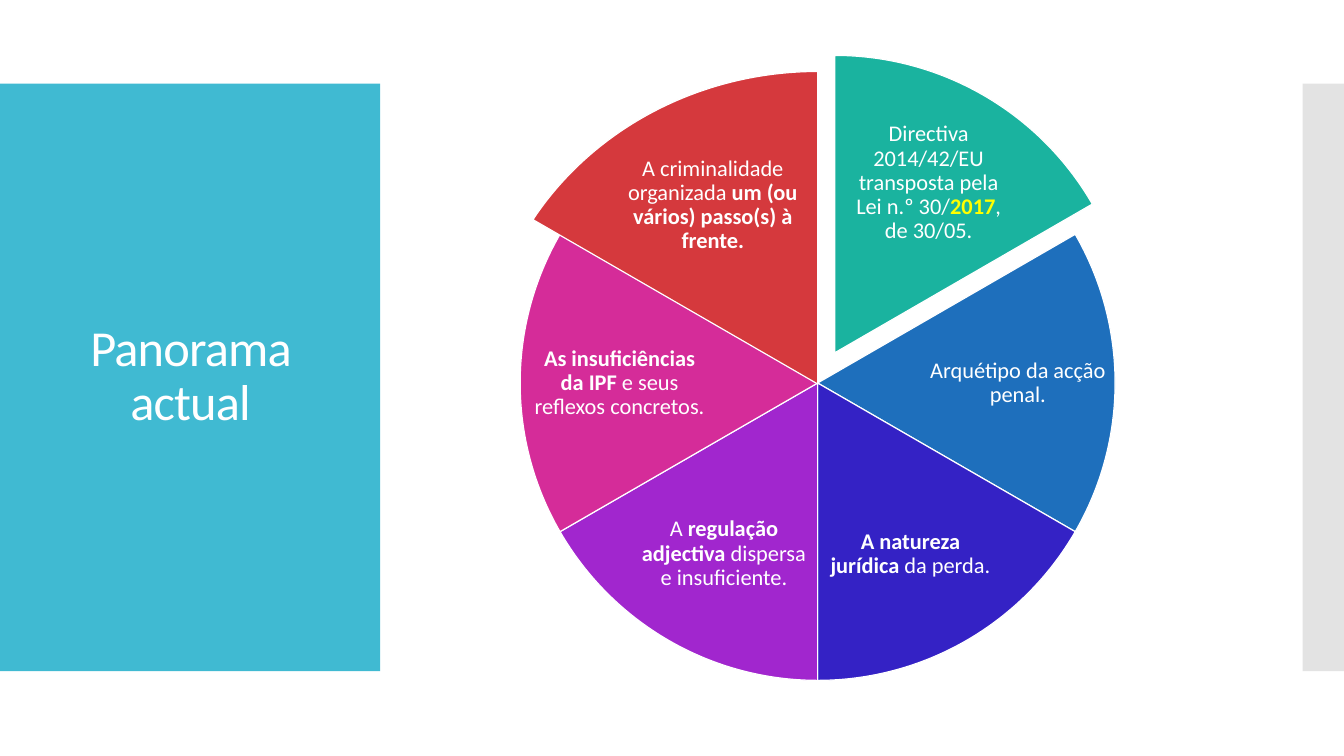
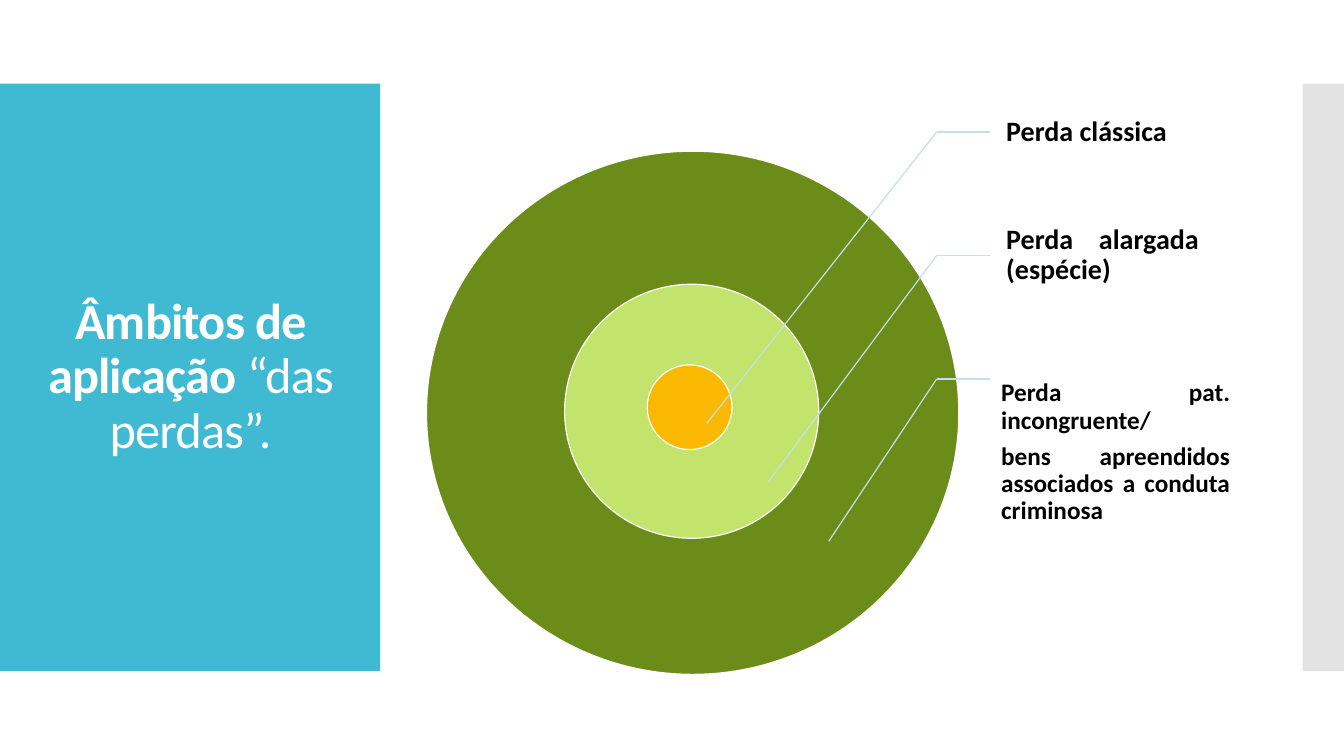
import pptx
import pptx.util
import pptx.dml.color
import pptx.enum.shapes
import pptx.enum.text
import pptx.oxml
import pptx.oxml.ns
import lxml.etree

Inches = pptx.util.Inches
Pt = pptx.util.Pt
RGBColor = pptx.dml.color.RGBColor
Preset = pptx.enum.shapes.MSO_SHAPE
Align = pptx.enum.text.PP_ALIGN
qn = pptx.oxml.ns.qn

FONT = "Calibri"
WHITE = RGBColor(0xFF, 0xFF, 0xFF)
BLACK = RGBColor(0x00, 0x00, 0x00)
YELLOW = RGBColor(0xFF, 0xFF, 0x00)
TITLE_BLUE = RGBColor(0x40, 0xBA, 0xD2)
EDGE_GRAY = RGBColor(0xC8, 0xC8, 0xC8)
LEADER_BLUE = RGBColor(0xC0, 0xE0, 0xEA)
TEAL = RGBColor(0x1A, 0xB3, 0x9F)
BLUE = RGBColor(0x1E, 0x6F, 0xBC)
INDIGO = RGBColor(0x34, 0x22, 0xC5)
PURPLE = RGBColor(0xA1, 0x26, 0xCE)
PINK = RGBColor(0xD5, 0x2C, 0x99)
RED = RGBColor(0xD5, 0x39, 0x3D)
DARK_GREEN = RGBColor(0x6C, 0x8C, 0x1A)
LIGHT_GREEN = RGBColor(0xC2, 0xE4, 0x6D)
AMBER = RGBColor(0xFA, 0xB9, 0x00)

LINE_WIDTH = Pt(0.85)
SLICE_INSETS = (0.02, 0.02, 0.02, 0.02)
TITLE_INSETS = (0.1, 0.05, 0.1, 0.05)
FULL_TURN = 216
SLICE_TURN = 36

SLICES = [
    (TEAL, (0.17, -0.3, 5.9, 5.9), (3.19, 0.33, 1.72, 1.27),
     [("Directiva 2014/42/EU transposta pela Lei n.º 30/", False),
      ("2017", True, YELLOW), (", de 30/05.", False)]),
    (BLUE, (0, 0, 5.9, 5.9), (4.04, 2.36, 1.79, 1.19),
     [("Arquétipo da acção penal.", False)]),
    (INDIGO, (0, 0, 5.9, 5.9), (3.01, 4.01, 1.72, 1.27),
     [("A natureza jurídica ", True), ("da perda.", False)]),
    (PURPLE, (0, 0, 5.9, 5.9), (1.16, 4.01, 1.72, 1.27),
     [("A", False), (" regulação adjectiva ", True),
      ("dispersa e insuficiente.", False)]),
    (PINK, (0, 0, 5.9, 5.9), (0.09, 2.36, 1.79, 1.19),
     [("As insuficiências da IPF ", True),
      ("e seus reflexos concretos.", False)]),
    (RED, (-0.37, -0.14, 6.64, 6.2), (0.94, 0.52, 1.94, 1.33),
     [("A criminalidade organizada ", False),
      ("um (ou vários) passo(s) à frente.", True)]),
]

RINGS = [
    (DARK_GREEN, (0, 0, 5.28, 5.19)),
    (LIGHT_GREEN, (1.37, 1.32, 2.52, 2.52)),
    (AMBER, (2.19, 2.12, 0.84, 0.84)),
]

CALLOUTS = [
    ((2.78, 2.7), (5.59, -0.8, 2.1, 1.23), 20, 0.16,
     [[("Perda clássica", True)]]),
    ((3.39, 3.28), (5.59, 0.42, 2.1, 1.23), 20, 0.16,
     [[("Perda alargada (espécie)", True)]]),
    ((3.99, 3.87), (5.56, 2.41, 2.44, 1.16), 18, 0.14,
     [[("Perda pat. incongruente/", True)],
      [("bens apreendidos associados a conduta criminosa", True)]]),
]


def within(origin, box):
    left, top, width, height = box
    return origin[0] + left, origin[1] + top, width, height


def add_filled(slide, preset, box, color, outline=None):
    shape = slide.shapes.add_shape(preset, *map(Inches, box))
    shape.shadow.inherit = False
    shape.fill.solid()
    shape.fill.fore_color.rgb = color
    if outline is None:
        shape.line.fill.background()
    else:
        shape.line.color.rgb = outline
        shape.line.width = LINE_WIDTH
    return shape


def add_text(slide, box, paragraphs, size, color, align, insets,
             space_after=0, tracking=None):
    frame = slide.shapes.add_textbox(*map(Inches, box)).text_frame
    frame.word_wrap = True
    frame.vertical_anchor = pptx.enum.text.MSO_ANCHOR.MIDDLE
    (frame.margin_left, frame.margin_top,
     frame.margin_right, frame.margin_bottom) = map(Inches, insets)
    for index, runs in enumerate(paragraphs):
        paragraph = frame.add_paragraph() if index else frame.paragraphs[0]
        paragraph.alignment = align
        paragraph.line_spacing = 0.9
        paragraph.space_after = Pt(space_after)
        paragraph.font.name = FONT
        paragraph.font.size = Pt(size)
        paragraph.font.color.rgb = color
        for text, bold, *accent in runs:
            run = paragraph.add_run()
            run.text = text
            run.font.bold = bold
            if accent:
                run.font.color.rgb = accent[0]
            if tracking is not None:
                run._r.get_or_add_rPr().set("spc", str(tracking))


def add_leader(slide, start, end):
    leader = slide.shapes.add_connector(
        pptx.enum.shapes.MSO_CONNECTOR.STRAIGHT, *map(Inches, start + end))
    leader.line.color.rgb = LEADER_BLUE
    leader.line.width = LINE_WIDTH
    lxml.etree.SubElement(leader._element.spPr, qn("a:effectLst"))


def add_titled_slide(deck, title):
    slide = deck.slides.add_slide(deck.slide_layouts[6])
    add_filled(slide, Preset.RECTANGLE, (0, 0.83, 3.77, 5.83), TITLE_BLUE)
    edge = add_filled(slide, Preset.RECTANGLE, (12.92, 0.83, 0.41, 5.83), EDGE_GRAY)
    tint = edge._element.spPr.find(qn("a:solidFill"))[0]
    lxml.etree.SubElement(tint, qn("a:alpha")).set("val", "50000")
    add_text(slide, (0.28, 1.23, 3.22, 5.03), [title], 36, WHITE,
             Align.CENTER, TITLE_INSETS, tracking=-60)
    return slide


def add_slice_wheel(slide, origin):
    for index, (color, pie_box, label_box, label) in enumerate(SLICES):
        start = (162 + SLICE_TURN * index) % FULL_TURN
        pie = add_filled(slide, Preset.PIE, within(origin, pie_box), color, WHITE)
        pie.adjustments[0] = start
        pie.adjustments[1] = (start + SLICE_TURN) % FULL_TURN
        add_text(slide, within(origin, label_box), [label], 16, WHITE,
                 Align.CENTER, SLICE_INSETS, space_after=5.6)


def add_target(slide, origin):
    left, top = origin
    for color, ring_box in RINGS:
        add_filled(slide, Preset.OVAL, within(origin, ring_box), color, WHITE)
    for index, (tip, label_box, size, indent, label) in enumerate(CALLOUTS):
        add_text(slide, within(origin, label_box), label, size, BLACK,
                 Align.JUSTIFY, (indent, 0.03, 0.03, 0.03),
                 space_after=size * 0.35)
        elbow = (left + 5.06, top - 0.19 + 1.225 * index)
        add_leader(slide, elbow, (left + 5.59, elbow[1]))
        add_leader(slide, elbow, (left + tip[0], top + tip[1]))


def main():
    deck = pptx.Presentation()
    deck.slide_width = Inches(13.33)
    deck.slide_height = Inches(7.5)
    panorama = add_titled_slide(deck, [("Panorama actual", False)])
    add_slice_wheel(panorama, (5.16, 0.85))
    scopes = add_titled_slide(
        deck, [("Âmbitos de aplicação ", True), ("“das perdas”.", False)])
    add_target(scopes, (4.23, 1.5))
    deck.save("out.pptx")


if __name__ == "__main__":
    main()
